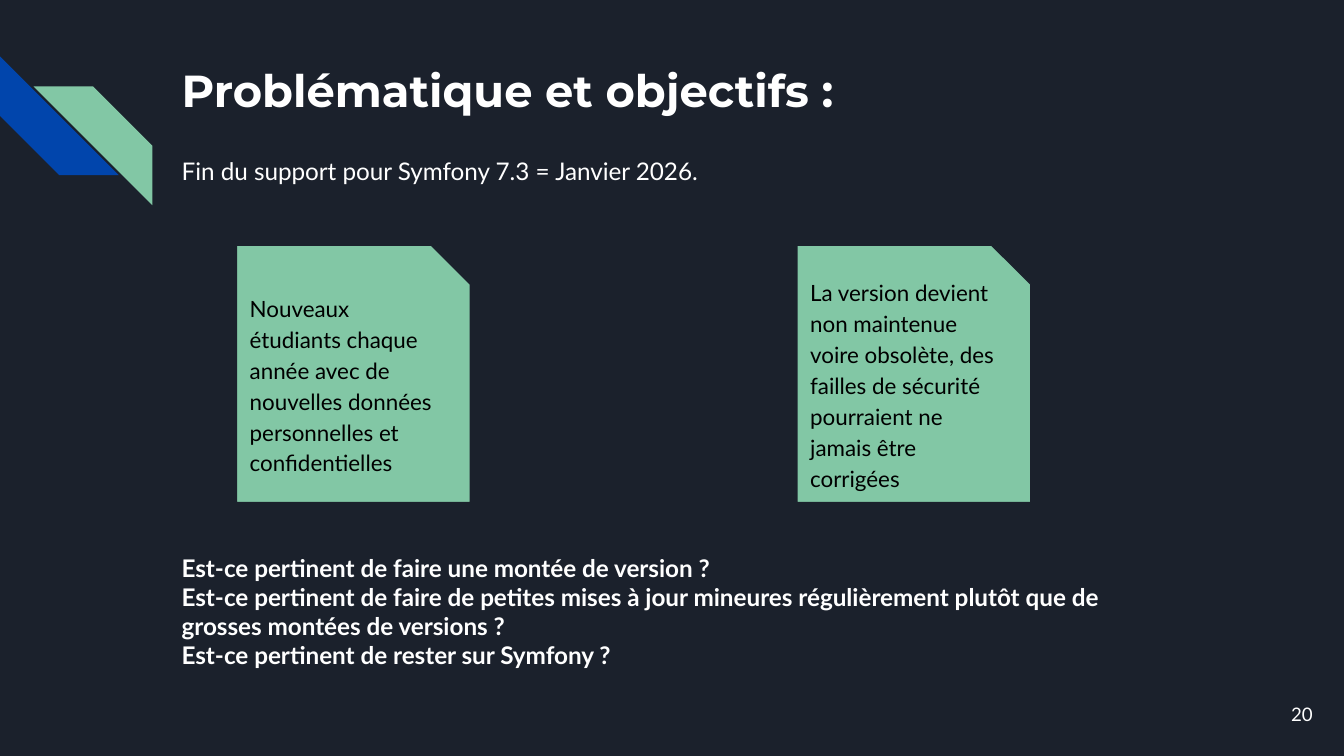
from pptx import Presentation
from pptx.dml.color import RGBColor
from pptx.enum.shapes import MSO_SHAPE as SHAPE
from pptx.enum.text import MSO_ANCHOR as ANCHOR, PP_ALIGN as ALIGN
from pptx.util import Inches, Pt

NAVY = RGBColor(0x1B, 0x21, 0x2C)
BLUE = RGBColor(0x01, 0x45, 0xAC)
GREEN = RGBColor(0x82, 0xC7, 0xA5)
WHITE = RGBColor(0xFF, 0xFF, 0xFF)
BLACK = RGBColor(0x00, 0x00, 0x00)

# Square grid: 100 columns by 56.25 rows
CELL = Inches(0.1)
COLS, ROWS = 100, 56.25
MARGIN = 12.53
STRIPE = 8.84
CARD_W, CARD_H, CARD_TOP = 17.4, 19.15, 18.25
CARD_LEFT, CARD_STEP = 17.6, 41.7

CARDS = [
    "Nouveaux étudiants chaque année avec de nouvelles données "
    "personnelles et confidentielles",
    "La version devient non maintenue voire obsolète, des failles de "
    "sécurité pourraient ne jamais être corrigées",
]
QUESTIONS = [
    "Est-ce pertinent de faire une montée de version ?",
    "Est-ce pertinent de faire de petites mises à jour mineures "
    "régulièrement plutôt que de grosses montées de versions ?",
    "Est-ce pertinent de rester sur Symfony ?",
]


def grid(*cells):
    return [round(c * CELL) for c in cells]


def write(sp, lines, size, color=WHITE, font="Lato", bold=False,
          align=ALIGN.LEFT, anchor=ANCHOR.TOP, spacing=1.0):
    tf = sp.text_frame
    tf.text = "\n".join(lines)
    tf.word_wrap = True
    tf.vertical_anchor = anchor
    tf.margin_left = tf.margin_right = CELL
    tf.margin_top = tf.margin_bottom = CELL
    for p in tf.paragraphs:
        p.alignment = align
        p.line_spacing = spacing
        for r in p.runs:
            r.font.name = font
            r.font.size = Pt(size)
            r.font.bold = bold
            r.font.color.rgb = color


def add_text(s, box, lines, size, **style):
    write(s.shapes.add_textbox(*grid(*box)), lines, size, **style)


def add_shape(s, kind, box, color, adjust):
    sp = s.shapes.add_shape(kind, *grid(*box))
    sp.shadow.inherit = False
    sp.adjustments[0] = adjust
    sp.fill.solid()
    sp.fill.fore_color.rgb = color
    return sp


def add_stripe(s, left, top, color, rotation):
    box = (left, top, STRIPE, STRIPE)
    sp = add_shape(s, SHAPE.DIAGONAL_STRIPE, box, color, 0.5)
    sp.rotation = rotation
    sp.line.fill.background()


def add_card(s, left, text):
    box = (left, CARD_TOP, CARD_W, CARD_H)
    sp = add_shape(s, SHAPE.SNIP_1_RECTANGLE, box, GREEN, 0.167)
    sp.line.color.rgb = NAVY
    sp.line.width = Pt(0.75)
    write(sp, [text], 12, color=BLACK, anchor=ANCHOR.MIDDLE, spacing=1.15)


def main():
    prs = Presentation()
    prs.slide_width, prs.slide_height = grid(COLS, ROWS)
    s = prs.slides.add_slide(prs.slide_layouts[6])
    s.background.fill.solid()
    s.background.fill.fore_color.rgb = NAVY

    # Corner stripes
    add_stripe(s, 0, 4.2, BLUE, 270)
    add_stripe(s, 2.5, 6.43, GREEN, 90)

    # Title and support deadline
    add_text(s, (MARGIN, 3.7, 77, 10), ["Problématique et objectifs :"], 24,
             font="Montserrat", bold=True)
    add_text(s, (MARGIN, 10.6, 78.1, 4.9),
             ["Fin du support pour Symfony 7.3 = Janvier 2026."], 13)

    # Two note cards
    for i, text in enumerate(CARDS):
        add_card(s, CARD_LEFT + i * CARD_STEP, text)

    # Questions and page number
    add_text(s, (MARGIN, 40.13, 75, 12.9), QUESTIONS, 13, bold=True)
    add_text(s, (92.65, 51, 6, 4.3), ["20"], 10,
             align=ALIGN.RIGHT, anchor=ANCHOR.MIDDLE)

    prs.save("out.pptx")


if __name__ == "__main__":
    main()
